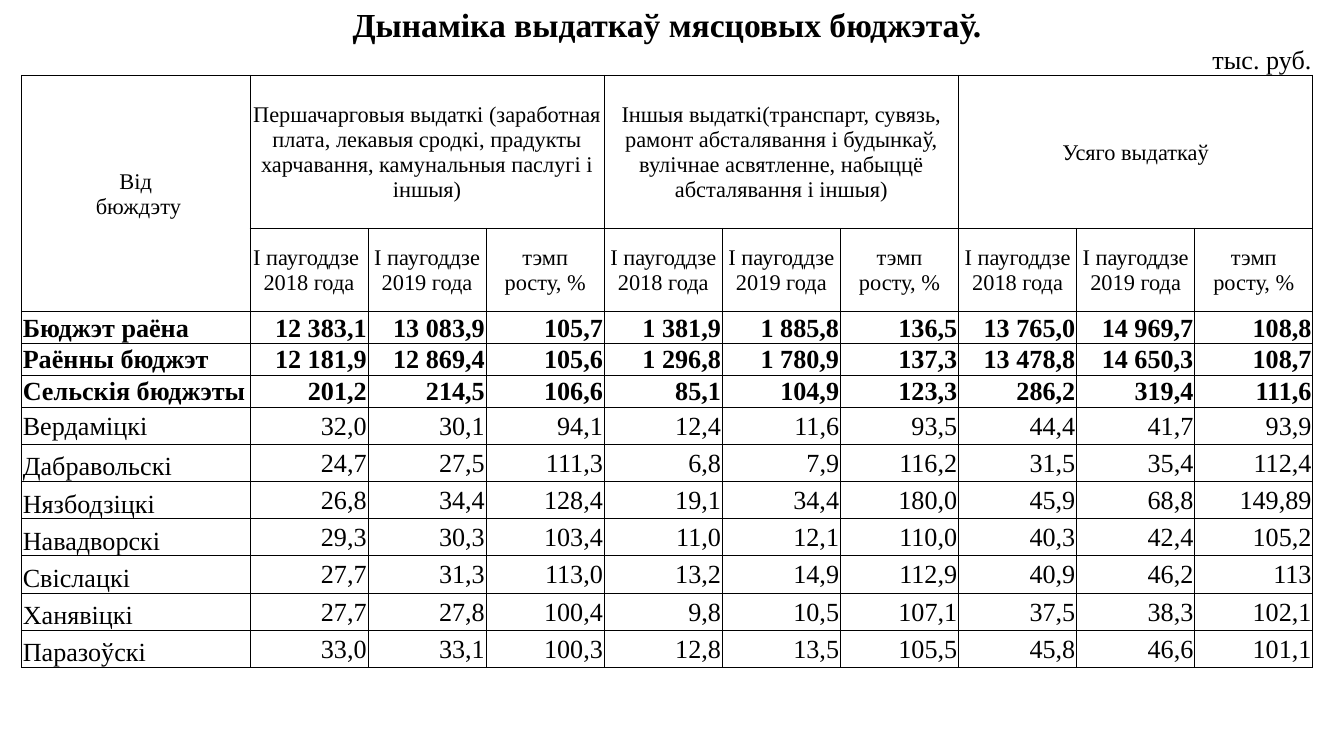
import pptx
import pptx.dml.color
import pptx.enum.text
import pptx.oxml
import pptx.oxml.ns
import pptx.util

ALIGN = pptx.enum.text.PP_ALIGN
ANCHOR = pptx.enum.text.MSO_ANCHOR
COLORS = {"ink": "000000", "paper": "FFFFFF"}
FONT = "Times New Roman"
NO_STYLE = "{2D5ABB26-0587-4C30-8999-92F81FD0307C}"

TITLE = "Дынаміка выдаткаў мясцовых бюджэтаў."
UNIT = "тыс. руб."
ROW_HEADING = "Від\n бюждэту"
GROUPS = [
    "Першачарговыя выдаткі (заработная плата, лекавыя сродкі, прадукты "
    "харчавання, камунальныя паслугі і іншыя)",
    "Іншыя выдаткі(транспарт, сувязь, рамонт абсталявання і будынкаў, "
    "вулічнае асвятленне, набыццё абсталявання і іншыя)",
    "Усяго выдаткаў",
]
GROWTH = "тэмп\nросту, %"
HALF_YEARS = ["I паугоддзе 2018 года", "I паугоддзе 2019 года", GROWTH]
SUBHEADINGS = ["I паугоддзе \n2018 года", "I паугоддзе\n2019 года", GROWTH] + HALF_YEARS * 2
TOTALS = [
    ("Бюджэт раёна", "12 383,1", "13 083,9", "105,7", "1 381,9", "1 885,8", "136,5",
     "13 765,0", "14 969,7", "108,8"),
    ("Раённы бюджэт", "12 181,9", "12 869,4", "105,6", "1 296,8", "1 780,9", "137,3",
     "13 478,8", "14 650,3", "108,7"),
    ("Сельскія бюджэты", "201,2", "214,5", "106,6", "85,1", "104,9", "123,3",
     "286,2", "319,4", "111,6"),
]
VILLAGES = [
    ("Вердаміцкі", "32,0", "30,1", "94,1", "12,4", "11,6", "93,5", "44,4", "41,7", "93,9"),
    ("Дабравольскі", "24,7", "27,5", "111,3", "6,8", "7,9", "116,2", "31,5", "35,4", "112,4"),
    ("Нязбодзіцкі", "26,8", "34,4", "128,4", "19,1", "34,4", "180,0", "45,9", "68,8", "149,89"),
    ("Навадворскі", "29,3", "30,3", "103,4", "11,0", "12,1", "110,0", "40,3", "42,4", "105,2"),
    ("Свіслацкі", "27,7", "31,3", "113,0", "13,2", "14,9", "112,9", "40,9", "46,2", "113"),
    ("Ханявіцкі", "27,7", "27,8", "100,4", "9,8", "10,5", "107,1", "37,5", "38,3", "102,1"),
    ("Паразоўскі", "33,0", "33,1", "100,3", "12,8", "13,5", "105,5", "45,8", "46,6", "101,1"),
]

# Grid, in inches
SLIDE_WIDTH = 10
SLIDE_HEIGHT = SLIDE_WIDTH * 9 / 16
LEFT, TOP, WIDTH = 0.16, 0.03, 9.61
NAME_WIDTH = 1.7
TOTALS_HEIGHT, VILLAGES_HEIGHT = 0.71, 1.94
VALUE_COLUMNS = len(SUBHEADINGS)
COLUMN_WIDTHS = [NAME_WIDTH] + [(WIDTH - NAME_WIDTH) / VALUE_COLUMNS] * VALUE_COLUMNS
ROW_HEIGHTS = ([0.3, 0.23, 1.14, 0.62]
               + [TOTALS_HEIGHT / len(TOTALS)] * len(TOTALS)
               + [VILLAGES_HEIGHT / len(VILLAGES)] * len(VILLAGES))
TITLE_ROW, UNIT_ROW, GROUP_ROW, SUB_ROW, FIRST_DATA_ROW = range(5)


def draw_borders(cell, sides):
    """Give the cell thin lines on the named sides (L, R, T, B) and none elsewhere."""
    properties = cell._tc.get_or_add_tcPr()
    for index, side in enumerate("LRTB"):
        paint = (f'<a:solidFill><a:srgbClr val="{COLORS["ink"]}"/></a:solidFill>'
                 if side in sides else "<a:noFill/>")
        properties.insert(index, pptx.oxml.parse_xml(
            f'<a:ln{side} {pptx.oxml.ns.nsdecls("a")} w="6350">{paint}</a:ln{side}>'))


def write(cell, text, size, align=ALIGN.CENTER, bold=False, anchor=ANCHOR.MIDDLE):
    cell.text = text
    cell.vertical_anchor = anchor
    for paragraph in cell.text_frame.paragraphs:
        paragraph.alignment = align
        font = paragraph.font
        font.name, font.size, font.bold = FONT, pptx.util.Pt(size), bold
        font.color.rgb = pptx.dml.color.RGBColor.from_string(COLORS["ink"])


def prepare_cell(cell, sides):
    cell.margin_left = cell.margin_right = cell.margin_top = pptx.util.Inches(0.01)
    cell.margin_bottom = 0
    cell.fill.background()
    draw_borders(cell, sides)
    # A small end mark keeps blank cells from stretching their row
    cell.text_frame.paragraphs[0]._p.append(pptx.oxml.parse_xml(
        f'<a:endParaRPr {pptx.oxml.ns.nsdecls("a")} sz="1200"/>'))


def fill_headings(table):
    last = VALUE_COLUMNS
    table.cell(TITLE_ROW, 0).merge(table.cell(TITLE_ROW, last))
    write(table.cell(TITLE_ROW, 0), TITLE, 18, bold=True, anchor=ANCHOR.BOTTOM)
    for column in (1, 3, 5):
        table.cell(UNIT_ROW, column).merge(table.cell(UNIT_ROW, column + 1))
    write(table.cell(UNIT_ROW, last), UNIT, 14, ALIGN.RIGHT, anchor=ANCHOR.BOTTOM)
    table.cell(GROUP_ROW, 0).merge(table.cell(SUB_ROW, 0))
    write(table.cell(GROUP_ROW, 0), ROW_HEADING, 12)
    span = VALUE_COLUMNS // len(GROUPS)
    for index, group in enumerate(GROUPS):
        first = 1 + index * span
        table.cell(GROUP_ROW, first).merge(table.cell(GROUP_ROW, first + span - 1))
        write(table.cell(GROUP_ROW, first), group, 12)
    for column, heading in enumerate(SUBHEADINGS, 1):
        write(table.cell(SUB_ROW, column), heading, 12)


def fill_data(table):
    for index, (name, *values) in enumerate(TOTALS + VILLAGES):
        row = FIRST_DATA_ROW + index
        bold = index < len(TOTALS)
        anchor = ANCHOR.BOTTOM if index > len(TOTALS) else ANCHOR.MIDDLE
        write(table.cell(row, 0), name, 14, ALIGN.LEFT, bold, anchor)
        for column, value in enumerate(values, 1):
            write(table.cell(row, column), value, 14, ALIGN.RIGHT, bold)


def main():
    deck = pptx.Presentation()
    deck.slide_width = pptx.util.Inches(SLIDE_WIDTH)
    deck.slide_height = pptx.util.Inches(SLIDE_HEIGHT)
    page = deck.slides.add_slide(deck.slide_layouts[6])
    page.background.fill.solid()
    page.background.fill.fore_color.rgb = pptx.dml.color.RGBColor.from_string(COLORS["paper"])
    table = page.shapes.add_table(
        len(ROW_HEIGHTS), len(COLUMN_WIDTHS),
        *(pptx.util.Inches(length) for length in (LEFT, TOP, WIDTH, sum(ROW_HEIGHTS)))).table
    table.first_row = table.horz_banding = False
    table._tbl.tblPr.find(pptx.oxml.ns.qn("a:tableStyleId")).text = NO_STYLE
    for column, width in zip(table.columns, COLUMN_WIDTHS):
        column.width = pptx.util.Inches(width)
    borders = {TITLE_ROW: "", UNIT_ROW: "B"}
    for index, (row, height) in enumerate(zip(table.rows, ROW_HEIGHTS)):
        row.height = pptx.util.Inches(height)
        for cell in row.cells:
            prepare_cell(cell, borders.get(index, "LRTB"))
    fill_headings(table)
    fill_data(table)
    deck.save("out.pptx")


if __name__ == "__main__":
    main()
